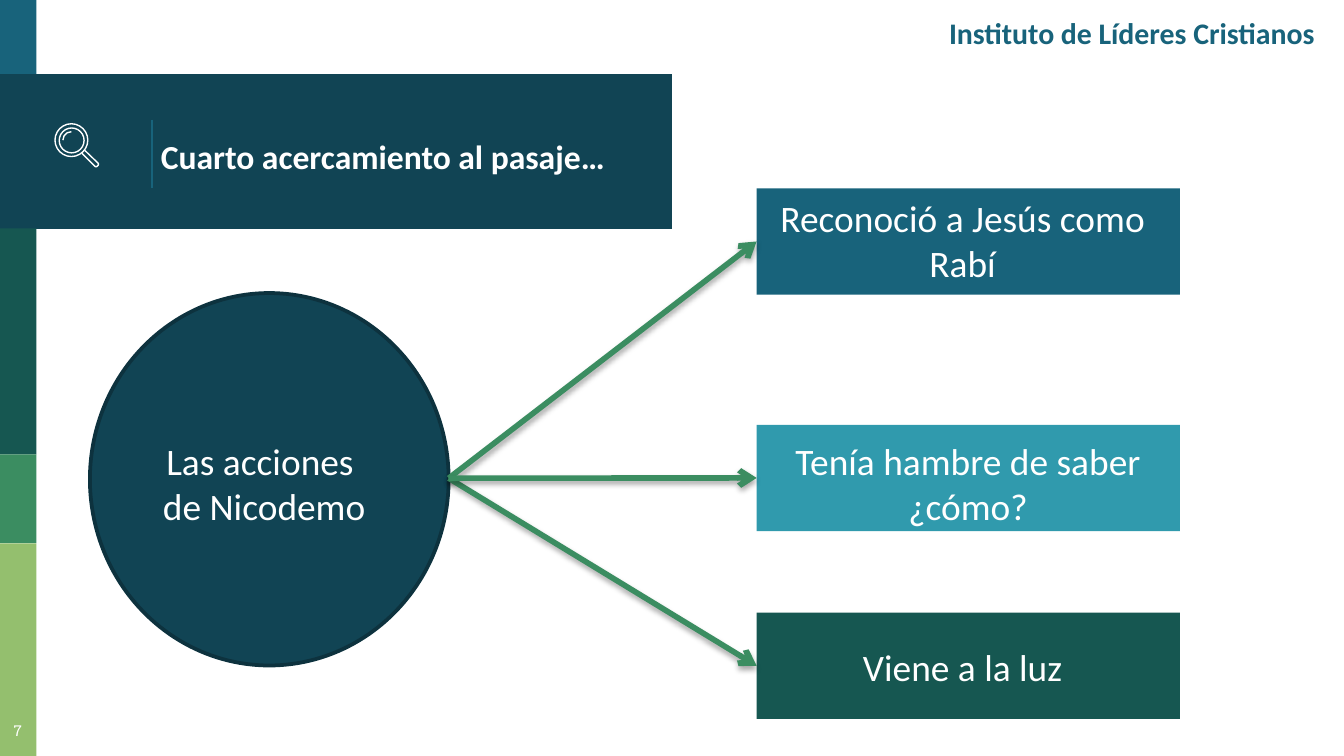
import pptx
import pptx.dml.color
import pptx.enum.shapes
import pptx.enum.text
import pptx.oxml
import pptx.oxml.ns
import pptx.util

Cm = pptx.util.Cm
Pt = pptx.util.Pt
RGBColor = pptx.dml.color.RGBColor
SHAPE = pptx.enum.shapes.MSO_SHAPE
STRAIGHT = pptx.enum.shapes.MSO_CONNECTOR.STRAIGHT
ALIGN = pptx.enum.text.PP_ALIGN
ANCHOR = pptx.enum.text.MSO_ANCHOR
AUTO_SIZE = pptx.enum.text.MSO_AUTO_SIZE

WHITE = RGBColor(0xFF, 0xFF, 0xFF)
BLUE = RGBColor(0x18, 0x63, 0x7B)
NAVY = RGBColor(0x11, 0x44, 0x54)
DARK_NAVY = RGBColor(0x0D, 0x32, 0x3E)
TEAL = RGBColor(0x30, 0x9A, 0xAD)
DARK_GREEN = RGBColor(0x16, 0x57, 0x51)
GREEN = RGBColor(0x3B, 0x8D, 0x61)
LIGHT_GREEN = RGBColor(0x94, 0xBF, 0x6E)

BAR_WIDTH = 0.69
ACTION_LEFT, ACTION_WIDTH, ACTION_HEIGHT = 14.3, 8, 2.01


def style_shape(shape, fill=None, line=None, line_width=0.75):
    shape.shadow.inherit = False
    if fill is None:
        shape.fill.background()
    else:
        shape.fill.solid()
        shape.fill.fore_color.rgb = fill
    if line is None:
        shape.line.fill.background()
    else:
        shape.line.color.rgb = line
        shape.line.width = Pt(line_width)


def add_shape(slide, kind, left, top, width, height, **style):
    shape = slide.shapes.add_shape(kind, Cm(left), Cm(top), Cm(width), Cm(height))
    style_shape(shape, **style)
    return shape


def add_text(slide, text, left, top, width, height, size=20, font="Calibri",
             color=WHITE, bold=False, align=ALIGN.CENTER, anchor=ANCHOR.TOP,
             margin_top=0.13, grow=False):
    box = slide.shapes.add_textbox(Cm(left), Cm(top), Cm(width), Cm(height))
    frame = box.text_frame
    frame.word_wrap = True
    frame.vertical_anchor = anchor
    frame.margin_top = Cm(margin_top)
    frame.auto_size = AUTO_SIZE.SHAPE_TO_FIT_TEXT if grow else AUTO_SIZE.NONE
    frame.text = text
    for paragraph in frame.paragraphs:
        paragraph.alignment = align
        paragraph.font.name = font
        paragraph.font.size = Pt(size)
        paragraph.font.bold = bold
        paragraph.font.color.rgb = color


def add_line(slide, start, end, color, width):
    connector = slide.shapes.add_connector(STRAIGHT, *(Cm(value) for value in start + end))
    connector.line.color.rgb = color
    connector.line.width = Pt(width)
    effects = pptx.oxml.parse_xml(f"<a:effectLst {pptx.oxml.ns.nsdecls('a')}/>")
    connector._element.spPr.append(effects)
    return connector, effects


def add_arrow(slide, start, target):
    end = (ACTION_LEFT, start[1])
    connector, effects = add_line(slide, start, end, GREEN, 3)
    connector.end_connect(target, 1)
    namespace = pptx.oxml.ns.nsdecls("a")
    connector.line._get_or_add_ln().append(
        pptx.oxml.parse_xml(f'<a:tailEnd {namespace} type="arrow"/>'))
    effects.append(pptx.oxml.parse_xml(
        f'<a:outerShdw {namespace} blurRad="40000" dist="23000" dir="5400000" rotWithShape="0">'
        '<a:srgbClr val="000000"><a:alpha val="35000"/></a:srgbClr></a:outerShdw>'))


def add_magnifier(slide):
    for left, top, diameter in ((1.04, 2.34, 0.62), (1.12, 2.42, 0.47)):
        add_shape(slide, SHAPE.OVAL, left, top, diameter, diameter, line=WHITE)
    glint = add_shape(slide, SHAPE.ARC, 1.19, 2.49, 0.32, 0.32, line=WHITE)
    glint.adjustments[0] = 108
    glint.adjustments[1] = 162
    handle = ((1.55, 2.9), (1.8, 3.15), (1.83, 3.15), (1.86, 3.12), (1.86, 3.09), (1.6, 2.84))
    points = [(Cm(x), Cm(y)) for x, y in handle]
    builder = slide.shapes.build_freeform(*points[0])
    builder.add_line_segments(points[1:], close=False)
    style_shape(builder.convert_to_shape(), line=WHITE)


def add_frame(slide):
    for left, top, width, height, color in (
        (0, 0, BAR_WIDTH, 1.47, BLUE),
        (0, 1.4, 12.7, 2.93, NAVY),
        (0, 4.32, BAR_WIDTH, 4.27, DARK_GREEN),
        (0, 8.59, BAR_WIDTH, 1.68, GREEN),
        (0, 10.27, BAR_WIDTH, 4.02, LIGHT_GREEN),
    ):
        add_shape(slide, SHAPE.RECTANGLE, left, top, width, height, fill=color)
    add_line(slide, (2.87, 2.26), (2.87, 3.56), BLUE, 0.75)
    add_magnifier(slide)
    add_text(slide, "Cuarto acercamiento al pasaje…", 2.79, 1.47, 10.72, 2.84, size=18,
             bold=True, align=ALIGN.LEFT, anchor=ANCHOR.MIDDLE, margin_top=0.25)
    add_text(slide, "Instituto de Líderes Cristianos", 15.7, 0.15, 9.4, 1.55, size=16,
             color=BLUE, bold=True, align=ALIGN.RIGHT)
    add_text(slide, "7", -0.15, 13.39, 0.97, 0.89, size=8, font="Roboto Slab", margin_top=0.25)


def add_actions(slide):
    add_shape(slide, SHAPE.OVAL, 1.7, 5.54, 6.78, 7.04, fill=NAVY, line=DARK_NAVY, line_width=2)
    add_text(slide, "Las acciones \nde Nicodemo", 1.3, 8.15, 7.39, 1.96, grow=True)
    for text, top, color, text_left, text_top, text_height in (
        ("Reconoció a Jesús como Rabí", 3.56, BLUE, 14.5, 3.56, 1.96),
        ("Viene a la luz", 11.58, DARK_GREEN, 14.5, 12.04, 1.11),
        ("Tenía hambre de saber\n¿cómo?", 8.03, TEAL, 14.6, 8.15, 1.96),
    ):
        target = add_shape(slide, SHAPE.RECTANGLE, ACTION_LEFT, top,
                           ACTION_WIDTH, ACTION_HEIGHT, fill=color)
        add_arrow(slide, (8.48, 9.04), target)
        add_text(slide, text, text_left, text_top, 7.39, text_height, grow=True)


def main():
    presentation = pptx.Presentation()
    presentation.slide_width = Cm(25.4)
    presentation.slide_height = Cm(14.29)
    slide = presentation.slides.add_slide(presentation.slide_layouts[6])
    add_frame(slide)
    add_actions(slide)
    presentation.save("out.pptx")


if __name__ == "__main__":
    main()
